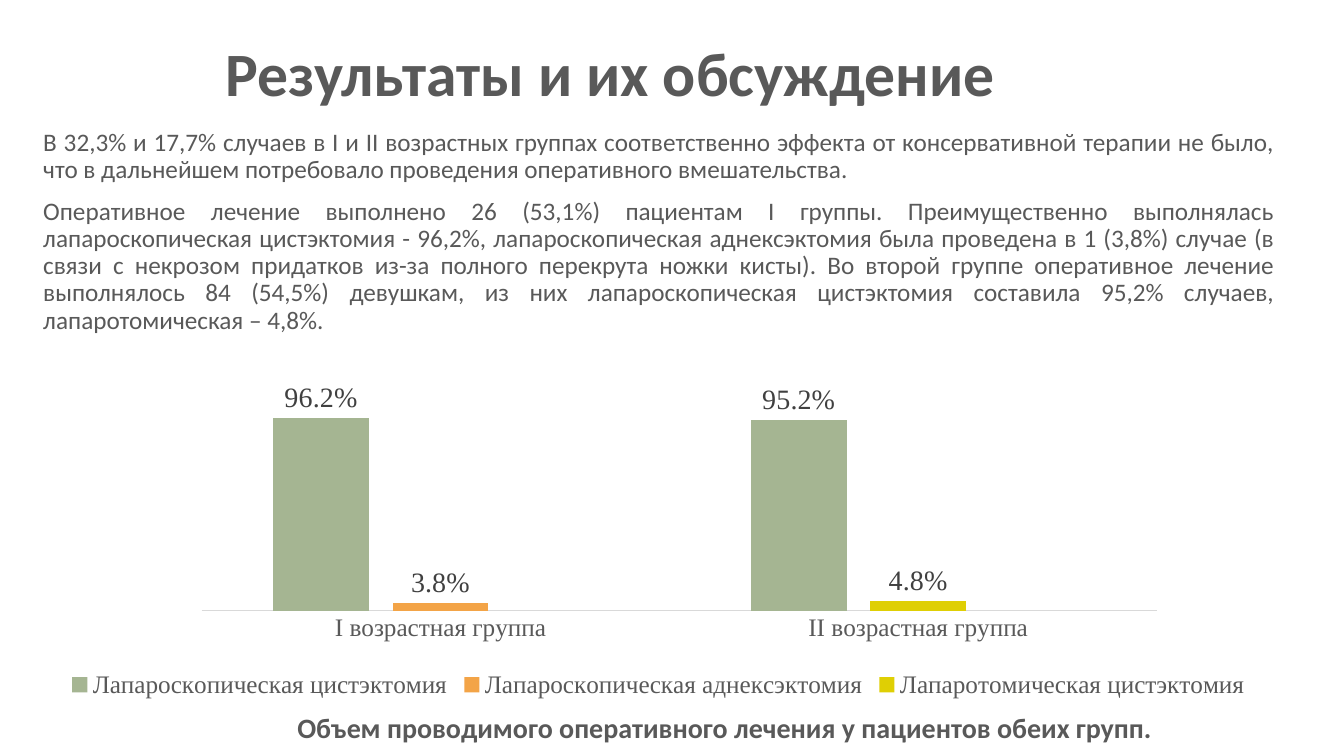
from lxml.etree import SubElement
from pptx import Presentation
from pptx.chart.data import CategoryChartData
from pptx.dml.color import RGBColor
from pptx.enum.chart import XL_CHART_TYPE, XL_LABEL_POSITION, XL_LEGEND_POSITION, XL_TICK_MARK
from pptx.enum.text import MSO_ANCHOR, PP_ALIGN
from pptx.oxml.ns import qn
from pptx.util import Inches, Pt

TITLE = "Результаты и их обсуждение"
FINDINGS = [
    "В 32,3% и 17,7% случаев в I и II возрастных группах соответственно эффекта от "
    "консервативной терапии не было, что в дальнейшем потребовало проведения "
    "оперативного вмешательства.",
    "Оперативное лечение выполнено 26 (53,1%) пациентам I группы. Преимущественно "
    "выполнялась лапароскопическая цистэктомия - 96,2%, лапароскопическая аднексэктомия "
    "была проведена в 1 (3,8%) случае (в связи с некрозом придатков из-за полного "
    "перекрута ножки кисты). Во второй группе оперативное лечение выполнялось 84 (54,5%) "
    "девушкам, из них лапароскопическая цистэктомия составила 95,2% случаев, "
    "лапаротомическая – 4,8%.",
]
CAPTION = "Объем проводимого оперативного лечения у пациентов обеих групп."
AGE_GROUPS = ["I возрастная группа", "II возрастная группа"]
# name, values, colour, label size
OPERATIONS = [
    ("Лапароскопическая цистэктомия", (0.962, 0.952), "A5B592", 20),
    ("Лапароскопическая аднексэктомия", (0.038, 0.048), "F3A447", 20),
    ("Лапаротомическая цистэктомия", (None, None), "DFCF04", 18),
]
# left, top, width, height in percent of the chart
PLOT_AREA = (12, 4, 79.5, 62.1)
LEGEND_AREA = (0.5, 80, 99, 10.5)


def color(hex_value):
    return RGBColor.from_string(hex_value)


def paint(fill, hex_value):
    fill.solid()
    fill.fore_color.rgb = color(hex_value)


def place_in_chart(element, index, area, **target):
    """Give a chart part a fixed area; a new layout goes in at index."""
    layout = element.find(qn("c:layout"))
    if layout is None:
        layout = SubElement(element, qn("c:layout"))
        element.insert(index, layout)
    manual = SubElement(layout, qn("c:manualLayout"))
    shares = {side: percent / 100 for side, percent in zip("xywh", area)}
    settings = {**target, "xMode": "edge", "yMode": "edge", **shares}
    for tag, value in settings.items():
        SubElement(manual, qn(f"c:{tag}")).set("val", str(value))


class SlideBuilder:
    """Places elements on a slide; boxes are in percent of its width and height."""

    text_font, chart_font = "Calibri", "Times New Roman"
    text_color, label_color, axis_color = "595959", "404040", "D9D9D9"

    def __init__(self, presentation):
        self.width = presentation.slide_width
        self.height = presentation.slide_height
        self.slide = presentation.slides.add_slide(presentation.slide_layouts[6])

    def frame(self, left, top, width, height):
        """Turn percentages into slide lengths."""
        sides = (self.width, self.height) * 2
        return [int(side * share / 100)
                for side, share in zip(sides, (left, top, width, height))]

    def style(self, font, size, name, hex_value, bold=False):
        font.size, font.name, font.bold = Pt(size), name, bold
        font.color.rgb = color(hex_value)

    def text(self, box, paragraphs, size, bold=False, wrap=True, anchor=MSO_ANCHOR.TOP,
             alignment=PP_ALIGN.LEFT, line_spacing=1.0, gap=0):
        text_frame = self.slide.shapes.add_textbox(*self.frame(*box)).text_frame
        text_frame.word_wrap = wrap
        text_frame.vertical_anchor = anchor
        text_frame.text = "\n".join(paragraphs)
        for index, paragraph in enumerate(text_frame.paragraphs):
            paragraph.alignment = alignment
            paragraph.line_spacing = line_spacing
            paragraph.space_before = Pt(gap if index else 0)
            for run in paragraph.runs:
                self.style(run.font, size, self.text_font, self.text_color, bold)

    def column_chart(self, box, categories, series_rows):
        data = CategoryChartData(number_format="0.0%")
        data.categories = categories
        for name, values, *_ in series_rows:
            data.add_series(name, values)
        chart = self.slide.shapes.add_chart(
            XL_CHART_TYPE.COLUMN_CLUSTERED, *self.frame(*box), data).chart
        chart.has_title = False
        self.style(chart.font, 10, self.text_font, "000000")

        plot = chart.plots[0]
        plot.gap_width, plot.overlap, plot.vary_by_categories = 150, -25, False
        for series, (_, _, fill_color, label_size) in zip(plot.series, series_rows):
            paint(series.format.fill, fill_color)
            series.invert_if_negative = False
            labels = series.data_labels
            labels.show_value = True
            labels.position = XL_LABEL_POSITION.OUTSIDE_END
            labels.number_format, labels.number_format_is_linked = "0.0%", False
            self.style(labels.font, label_size, self.chart_font, self.label_color)
        place_in_chart(plot._element.getparent(), 0, PLOT_AREA, layoutTarget="inner")

        self.axes(chart)
        self.legend(chart)
        return chart

    def axes(self, chart):
        values = chart.value_axis
        values.minimum_scale, values.maximum_scale = 0, 1.2
        values.has_major_gridlines = False
        values.visible = False
        categories = chart.category_axis
        categories.major_tick_mark = XL_TICK_MARK.NONE
        categories.format.line.color.rgb = color(self.axis_color)
        categories.format.line.width = Pt(0.75)
        self.style(categories.tick_labels.font, 18, self.chart_font, self.text_color)

    def legend(self, chart):
        chart.has_legend = True
        legend = chart.legend
        legend.position = XL_LEGEND_POSITION.BOTTOM
        legend.include_in_layout = False
        self.style(legend.font, 18, self.chart_font, self.text_color)
        place_in_chart(legend._element, 1, LEGEND_AREA)


def main():
    presentation = Presentation()
    presentation.slide_width, presentation.slide_height = Inches(13.33), Inches(7.5)
    builder = SlideBuilder(presentation)
    builder.text((16.02, 1.73, 78.84, 16.8), [TITLE], 44, bold=True,
                 anchor=MSO_ANCHOR.MIDDLE, line_spacing=0.9)
    builder.text((2.48, 16.53, 93.1, 63.33), FINDINGS, 18,
                 alignment=PP_ALIGN.JUSTIFY, line_spacing=0.9, gap=10)
    chart = builder.column_chart((4.28, 46.93, 89.42, 51.2), AGE_GROUPS, OPERATIONS)
    # In group II the second column stands for open surgery
    adnexectomy = chart.plots[0].series[1]
    paint(adnexectomy.points[1].format.fill, OPERATIONS[2][2])
    builder.text((21.38, 93.33, 65.57, 6.67), [CAPTION], 20, bold=True, wrap=False)
    presentation.save("out.pptx")


if __name__ == "__main__":
    main()
